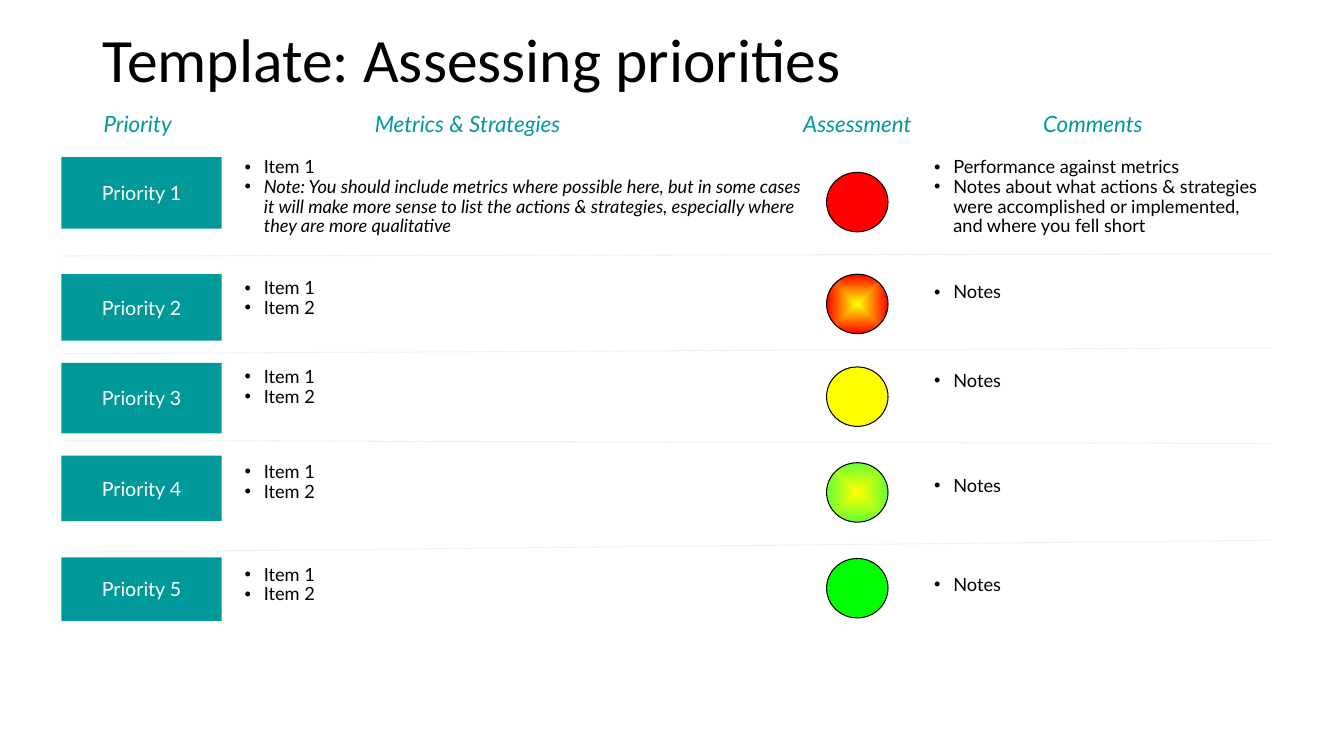
from pptx import Presentation
from pptx.dml.color import RGBColor as Rgb
from pptx.enum.dml import MSO_LINE as Dash
from pptx.enum.shapes import MSO_CONNECTOR as Link, MSO_SHAPE as Kind
from pptx.enum.text import MSO_ANCHOR as Anchor, PP_ALIGN as Align
from pptx.oxml.ns import qn
from pptx.util import Pt
from lxml.etree import SubElement as sub

PX = 9144
HUE = {
    "ink": "000000", "white": "FFFFFF", "teal": "009999", "rule": "E7E6E6",
    "red": "FF0000", "yellow": "FFFF00", "green": "00FF00", "lime": "66FF33",
}
STYLE = {
    "title": {"name": "Calibri", "size": Pt(44)},
    "head": {"name": "Lato", "size": Pt(16), "italic": True},
    "tag": {"name": "Lato", "size": Pt(14)},
    "item": {"name": "Lato", "size": Pt(13)},
    "note": {"name": "Lato", "size": Pt(13), "italic": True},
}
HEADS = ["Priority", "Metrics & Strategies", "Assessment", "Comments"]
TABS = [36, 305, 730, 968]
PAIR = [("Item 1", "item"), ("Item 2", "item")]
NOTES = [("Notes", "item")]
ADVICE = (
    "Note: You should include metrics where possible here, but in some cases "
    "it will make more sense to list the actions & strategies, especially "
    "where they are more qualitative"
)
RESULT = (
    "Notes about what actions & strategies were accomplished or implemented, "
    "and where you fell short"
)
ROWS = [
    {"box": (61, 156, 1200, 71), "items": [("Item 1", "item"), (ADVICE, "note")],
     "notes": [("Performance against metrics", "item"), (RESULT, "item")],
     "wide": 573, "lines": (5, 4), "drop": (-4, 15, -4),
     "dot": ["red"], "rule": (1, 98, 96)},
    {"box": (61, 272, 1200, 66), "drop": (0, 0, 4),
     "dot": ["yellow", "red"], "rule": (-2, 79, 73)},
    {"box": (61, 360, 1200, 70), "drop": (0, 4, 4),
     "dot": ["yellow"], "rule": (1, 77, 80)},
    {"box": (61, 452, 1200, 65), "drop": (2, 7, 16),
     "dot": ["yellow", "lime"], "rule": (1, 96, 84)},
    {"box": (61, 553, 1200, 63), "drop": (3, 1, 13), "dot": ["green"]},
]


def emu(*nums):
    """Turn px lengths into EMU."""
    return [round(n * PX) for n in nums]


def rgb(key):
    """Look up a colour by its name."""
    return Rgb.from_string(HUE[key])


def write(para, text, style, hue="ink"):
    """Add one styled run to a paragraph."""
    run = para.add_run()
    run.text = text
    for key, val in STYLE[style].items():
        setattr(run.font, key, val)
    run.font.color.rgb = rgb(hue)


def frame(slide, box):
    """Add a wrapping text box and return its frame."""
    area = slide.shapes.add_textbox(*emu(*box)).text_frame
    area.word_wrap = True
    return area


def title(slide, box):
    """Place the slide title."""
    area = frame(slide, box)
    area.vertical_anchor = Anchor.MIDDLE
    para = area.paragraphs[0]
    para.line_spacing = 0.9
    write(para, "Template: Assessing priorities", "title")


def header(slide, box):
    """Place the column heads on tab stops."""
    para = frame(slide, box).paragraphs[0]
    stops = sub(para._p.get_or_add_pPr(), qn("a:tabLst"))
    for pos in emu(*TABS):
        sub(stops, qn("a:tab"), pos=str(pos), algn="l")
    write(para, "".join("\t" + head for head in HEADS), "head", "teal")


def bullets(slide, box, items):
    """Place a bulleted list."""
    area = frame(slide, box)
    for i, (text, style) in enumerate(items):
        para = area.add_paragraph() if i else area.paragraphs[0]
        para.line_spacing = 0.9
        props = para._p.get_or_add_pPr()
        dent, = emu(19)
        props.set("marL", str(dent))
        props.set("indent", str(-dent))
        sub(props, qn("a:buFont"), typeface="Arial")
        sub(props, qn("a:buChar"), char="•")
        write(para, text, style)


def tag(slide, box, text):
    """Place a priority label."""
    shape = slide.shapes.add_shape(Kind.RECTANGLE, *emu(*box))
    shape.shadow.inherit = False
    shape.fill.solid()
    shape.fill.fore_color.rgb = rgb("teal")
    shape.line.fill.background()
    shape.text_frame.vertical_anchor = Anchor.MIDDLE
    para = shape.text_frame.paragraphs[0]
    para.alignment = Align.CENTER
    write(para, text, "tag", "white")


def dot(slide, box, hues):
    """Place a rating dot, plain or blended from its centre."""
    shape = slide.shapes.add_shape(Kind.OVAL, *emu(*box))
    shape.shadow.inherit = False
    shape.line.color.rgb = rgb("ink")
    shape.line.width = Pt(0.75)
    if len(hues) == 1:
        shape.fill.solid()
        shape.fill.fore_color.rgb = rgb(hues[0])
        return
    shape.fill.gradient()
    for stop, hue in zip(shape.fill.gradient_stops, hues):
        stop.color.rgb = rgb(hue)
    grad = shape._element.spPr.find(qn("a:gradFill"))
    grad.remove(grad.find(qn("a:lin")))
    blend = sub(grad, qn("a:path"), path="shape")
    sub(blend, qn("a:fillToRect"), {side: "50000" for side in "ltrb"})


def rule(slide, ends):
    """Draw a dotted row divider."""
    line = slide.shapes.add_connector(Link.STRAIGHT, *emu(*ends))
    line.line.color.rgb = rgb("rule")
    line.line.width = Pt(0.75)
    line.line.dash_style = Dash.ROUND_DOT
    sub(line._element.spPr, qn("a:effectLst"))


def row(slide, box, name, drop, dot_hues, items=PAIR, notes=NOTES,
        wide=547, lines=(2, 1), ends=None):
    """Place one priority with its metrics, rating and comments."""
    x, y, w, h = box
    high = [round(10 + 19.7 * n) for n in lines]
    tag(slide, (x, y, 159, h), name)
    bullets(slide, (x + 172, y + drop[0], wide, high[0]), items)
    dot(slide, (x + 759, y + drop[1], 61, 59), dot_hues)
    bullets(slide, (x + 856, y + drop[2], 343, high[1]), notes)
    if ends:
        start, left, right = ends
        rule(slide, (x + start, y + left, x + w, y + right))


def main():
    """Build and save the slide."""
    deck = Presentation()
    deck.slide_width, deck.slide_height = emu(1333.33, 750)
    slide = deck.slides.add_slide(deck.slide_layouts[6])
    title(slide, (92, -10, 1150, 145))
    header(slide, (57, 104, 1200, 37))
    for i, data in enumerate(ROWS, 1):
        rest = {k: data[k] for k in ("items", "notes", "wide", "lines") if k in data}
        row(slide, data["box"], f"Priority {i}", data["drop"], data["dot"],
            ends=data.get("rule"), **rest)
    deck.save("out.pptx")


if __name__ == "__main__":
    main()
